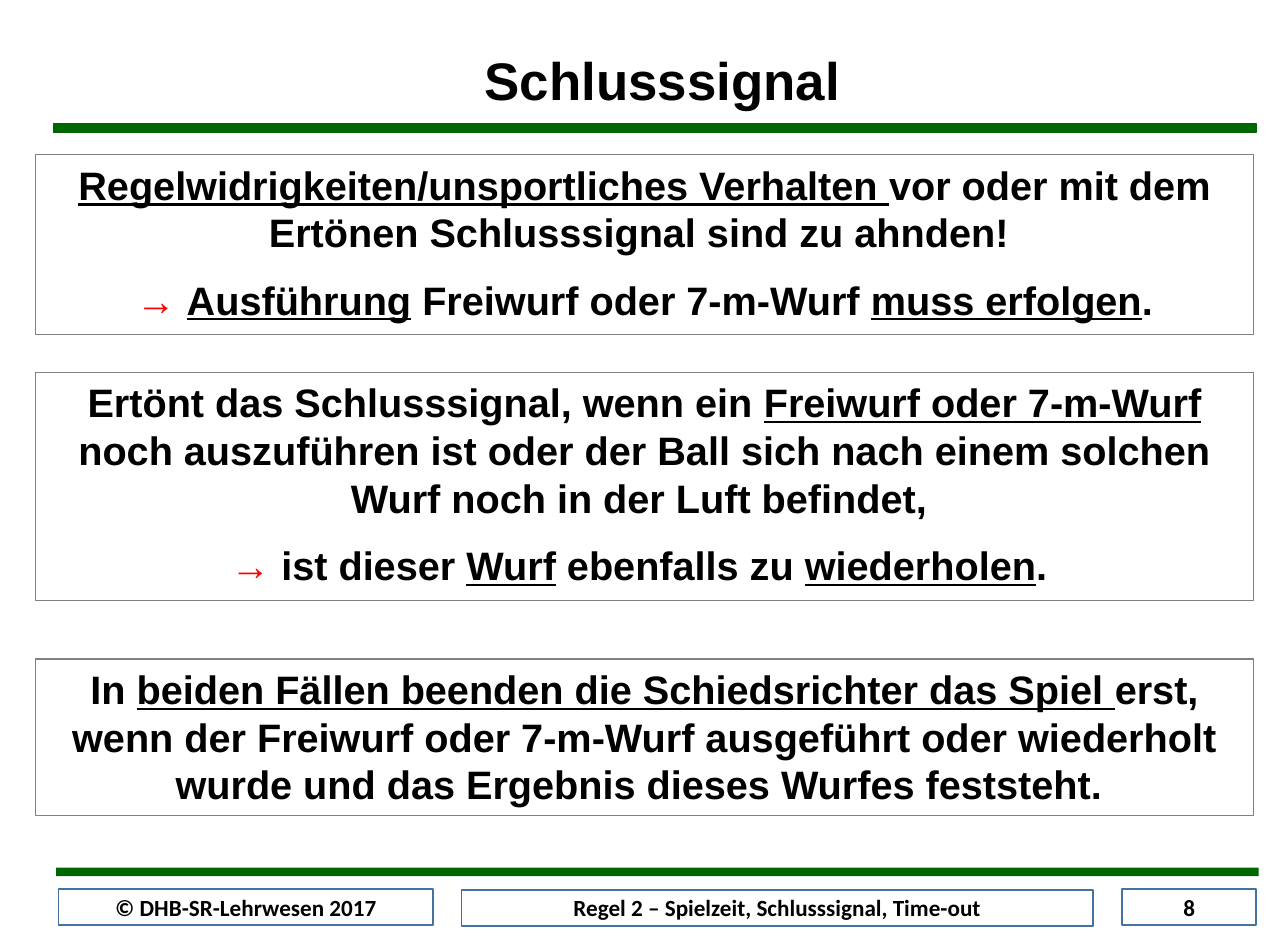
from dataclasses import dataclass

from pptx import Presentation
from pptx.dml.color import RGBColor
from pptx.enum.shapes import MSO_SHAPE
from pptx.enum.text import MSO_ANCHOR, PP_ALIGN
from pptx.util import Pt


@dataclass(frozen=True)
class Theme:
    green: str = "006600"
    blue: str = "43739E"
    grey: str = "808080"
    white: str = "FFFFFF"
    black: str = "000000"
    red: str = "FF0000"
    head: str = "Arial"
    foot: str = "Calibri"
    title: int = 32
    body: int = 24
    small: int = 14


THEME = Theme()

# Underscores enclose underlined words; arrows are drawn in red.
RULES = [
    (93.6, 108.7, [
        "_Regelwidrigkeiten/unsportliches Verhalten _vor oder mit dem "
        "Ertönen Schlusssignal sind zu ahnden! ",
        "→ _Ausführung_ Freiwurf oder 7-m-Wurf _muss erfolgen_.",
    ]),
    (225.4, 138.2, [
        "Ertönt das Schlusssignal, wenn ein _Freiwurf oder 7-m-Wurf _"
        "noch auszuführen ist oder der Ball sich nach einem solchen "
        "Wurf noch in der Luft befindet, ",
        "→ ist dieser _Wurf_ ebenfalls zu _wiederholen_. ",
    ]),
    (398.9, 95, [
        "In _beiden Fällen beenden die Schiedsrichter das Spiel _erst, "
        "wenn der Freiwurf oder 7-m-Wurf ausgeführt oder wiederholt "
        "wurde und das Ergebnis dieses Wurfes feststeht. ",
    ]),
]

FOOTER = [
    (35.5, 538.1, 226.8, "© DHB-SR-Lehrwesen 2017"),
    (679.2, 538.1, 81.4, "8"),
    (279.4, 538.6, 382.3, "Regel 2 – Spielzeit, Schlusssignal, Time-out"),
]


def write(shape, lines, font, size, space=1.0, gap=0, anchor=MSO_ANCHOR.TOP):
    """Fill a shape with centred bold paragraphs, resolving the markup."""
    frame = shape.text_frame
    frame.word_wrap = True
    frame.vertical_anchor = anchor
    for row, line in enumerate(lines):
        para = frame.add_paragraph() if row else frame.paragraphs[0]
        para.alignment = PP_ALIGN.CENTER
        para.line_spacing = space
        para.space_before = Pt(gap if row else 0)
        for index, part in enumerate(line.split("_")):
            for text in filter(None, part.partition("→")):
                run = para.add_run()
                run.text = text
                run.font.name = font
                run.font.size = Pt(size)
                run.font.bold = True
                run.font.underline = index % 2 == 1
                color = THEME.red if text == "→" else THEME.black
                run.font.color.rgb = RGBColor.from_string(color)


def add_box(slide, left, top, width, height, fill, line=None, weight=0.75):
    box = slide.shapes.add_shape(
        MSO_SHAPE.RECTANGLE, Pt(left), Pt(top), Pt(width), Pt(height))
    box.shadow.inherit = False
    box.fill.solid()
    box.fill.fore_color.rgb = RGBColor.from_string(fill)
    if line:
        box.line.color.rgb = RGBColor.from_string(line)
        box.line.width = Pt(weight)
    else:
        box.line.fill.background()
    return box


def set_title(slide, text):
    title = slide.shapes.title
    title.left, title.top = Pt(174.4), Pt(29.5)
    title.width, title.height = Pt(453.6), Pt(34.6)
    write(title, [text], THEME.head, THEME.title, space=0.9)


def main():
    deck = Presentation()
    deck.slide_width, deck.slide_height = Pt(779.76), Pt(570.24)
    slide = deck.slides.add_slide(deck.slide_layouts[5])

    add_box(slide, 32.4, 74.9, 728, 5.4, THEME.green, THEME.green)
    add_box(slide, 34, 525.2, 728, 5.2, THEME.green)
    for left, top, width, text in FOOTER:
        box = add_box(slide, left, top, width, 21.8, THEME.white, THEME.blue, 1)
        write(box, [text], THEME.foot, THEME.small, anchor=MSO_ANCHOR.MIDDLE)
    for top, height, lines in RULES:
        box = add_box(slide, 21.6, top, 737.1, height, THEME.white, THEME.grey)
        write(box, lines, THEME.head, THEME.body, gap=12)
    set_title(slide, "Schlusssignal")

    deck.save("out.pptx")


if __name__ == "__main__":
    main()
